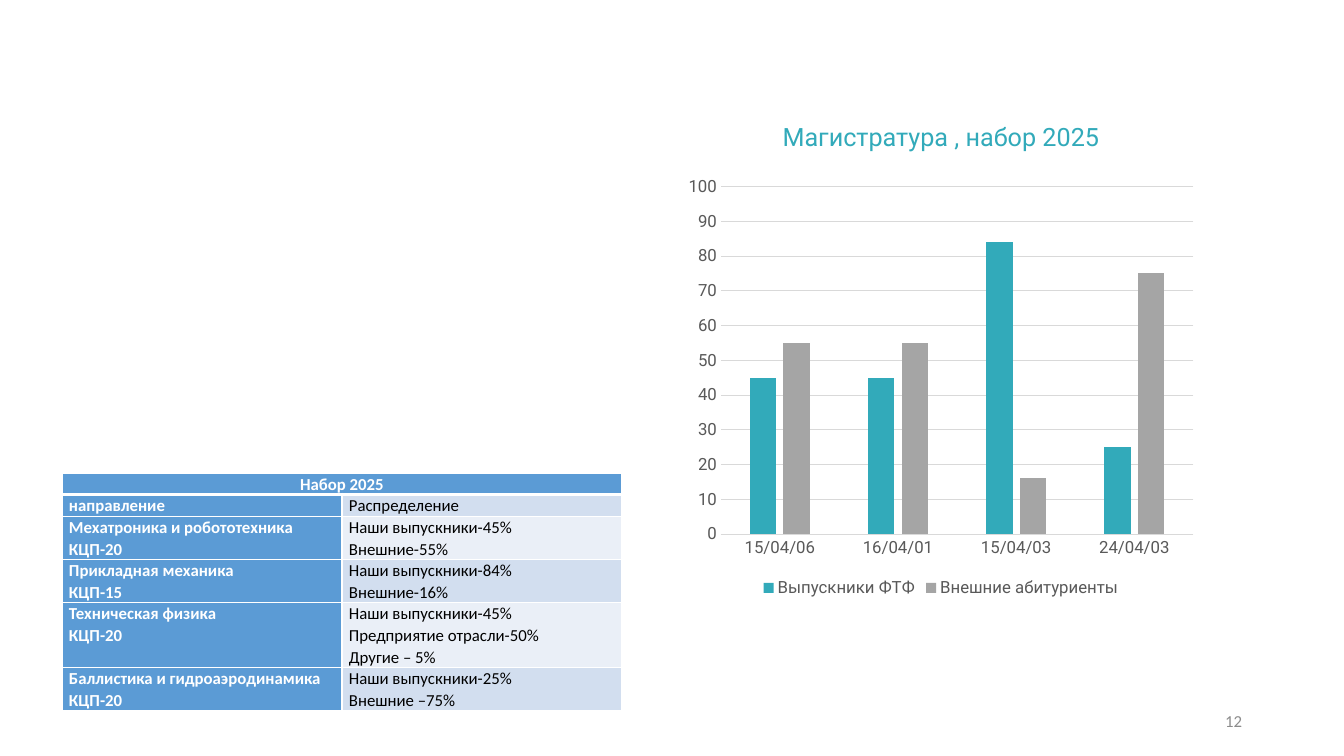
"""Build the slide on the 2025 master's intake: a table and a column chart."""
from lxml import etree
from pptx import Presentation
from pptx import util as u
from pptx.chart.data import CategoryChartData
from pptx.dml.color import RGBColor
from pptx.enum import chart as ch
from pptx.enum import text as t
from pptx.oxml.ns import qn

COLORS = {
    "teal": "32AABA", "gray": "A5A5A5", "label": "595959", "grid": "D9D9D9",
    "number": "8C8C8C", "blue": "5B9BD5", "band": "D2DEEF", "pale": "EAEFF7",
    "white": "FFFFFF", "black": "000000",
}
TABLE_TITLE = "Набор 2025"
TABLE_ROWS = [
    (["направление"], ["Распределение"]),
    (["Мехатроника и робототехника", "КЦП-20"], ["Наши выпускники-45%", "Внешние-55%"]),
    (["Прикладная механика", "КЦП-15"], ["Наши выпускники-84%", "Внешние-16%"]),
    (["Техническая физика", "КЦП-20"],
     ["Наши выпускники-45%", "Предприятие отрасли-50%", "Другие – 5%"]),
    (["Баллистика и гидроаэродинамика", "КЦП-20"], ["Наши выпускники-25%", "Внешние –75%"]),
]
CHART_TITLE = "Магистратура , набор 2025"
CATEGORIES = ["15/04/06", "16/04/01", "15/04/03", "24/04/03"]
SERIES = [
    ("Выпускники ФТФ", [45, 45, 84, 25], "teal"),
    ("Внешние абитуриенты", [55, 55, 16, 75], "gray"),
]
PAGE_NUMBER = "12"

SLIDE_SIZE = (1344, 756)
TABLE_AT = (62, 473)
COLUMN_WIDTH, LINE_HEIGHT = 280, 21
TITLE_AT = (671, 116, 540, 40)
CHART_AT = (678, 168, 526, 434)
NUMBER_AT = (950, 701, 302, 40)


def px(length):
    return u.Emu(round(length * 914400 / 100.8))


def rgb(name):
    return RGBColor.from_string(COLORS[name])


def set_font(font, size, color, name="Roboto", bold=False):
    font.size, font.name, font.bold = u.Pt(size), name, bold
    font.color.rgb = rgb(color)


def write(frame, lines, align=t.PP_ALIGN.LEFT, spacing=None, **font):
    for index, line in enumerate(lines):
        para = frame.add_paragraph() if index else frame.paragraphs[0]
        para.alignment = align
        para.line_spacing = spacing
        span = para.add_run()
        span.text = line
        set_font(span.font, **font)


def add_label(page, place, line, anchor=t.MSO_ANCHOR.TOP, **style):
    box = page.shapes.add_textbox(*map(px, place))
    box.text_frame.word_wrap = True
    box.text_frame.vertical_anchor = anchor
    write(box.text_frame, [line], **style)


def style_cell(cell, fill, top=1, bottom=1):
    cell.margin_left = cell.margin_right = px(7)
    cell.margin_top = cell.margin_bottom = 0
    props = cell._tc.get_or_add_tcPr()
    for side, width in (("L", 1), ("R", 1), ("T", top), ("B", bottom)):
        edge = etree.SubElement(props, qn(f"a:ln{side}"), w=str(u.Pt(width)))
        solid = etree.SubElement(edge, qn("a:solidFill"))
        etree.SubElement(solid, qn("a:srgbClr"), val=COLORS["white"])
    cell.fill.solid()
    cell.fill.fore_color.rgb = rgb(fill)


def add_intake_table(page):
    rows = [([TABLE_TITLE], [])] + TABLE_ROWS
    heights = [LINE_HEIGHT * max(map(len, row)) for row in rows]
    table = page.shapes.add_table(
        len(rows), 2, *map(px, TABLE_AT), px(2 * COLUMN_WIDTH), px(sum(heights))).table
    for column in table.columns:
        column.width = px(COLUMN_WIDTH)
    table.cell(0, 0).merge(table.cell(0, 1))
    for r, row in enumerate(rows):
        table.rows[r].height = px(heights[r])
        for c, lines in enumerate(row):
            cell = table.cell(r, c)
            header = r == 0 or c == 0
            fill = "blue" if header else "band" if r % 2 else "pale"
            style_cell(cell, fill, top=3 if r == 1 else 1, bottom=3 if r == 0 else 1)
            write(cell.text_frame, lines, spacing=1.07, size=12, name="Calibri", bold=header,
                  color="white" if header else "black",
                  align=t.PP_ALIGN.LEFT if r else t.PP_ALIGN.CENTER)


def add_intake_chart(page):
    data = CategoryChartData()
    data.categories = CATEGORIES
    for name, values, _ in SERIES:
        data.add_series(name, values)
    chart = page.shapes.add_chart(
        ch.XL_CHART_TYPE.COLUMN_CLUSTERED, *map(px, CHART_AT), data).chart
    set_font(chart.font, 10, "black")
    chart.has_title = False
    chart.has_legend = True
    chart.legend.position = ch.XL_LEGEND_POSITION.BOTTOM
    chart.legend.include_in_layout = False
    set_font(chart.legend.font, 12, "label")
    for axis in (chart.category_axis, chart.value_axis):
        axis.major_tick_mark = axis.minor_tick_mark = ch.XL_TICK_MARK.NONE
        set_font(axis.tick_labels.font, 12, "label")
    chart.value_axis.minimum_scale = 0
    chart.value_axis.maximum_scale = 100
    chart.value_axis.major_unit = 10
    chart.value_axis.format.line.fill.background()
    for line in (chart.category_axis.format.line, chart.value_axis.major_gridlines.format.line):
        line.width = u.Pt(0.75)
        line.color.rgb = rgb("grid")
    plot = chart.plots[0]
    plot.vary_by_categories = False
    plot.gap_width, plot.overlap = 219, -27
    for series, (_, _, color) in zip(plot.series, SERIES):
        series.format.fill.solid()
        series.format.fill.fore_color.rgb = rgb(color)


def main():
    deck = Presentation()
    deck.slide_width, deck.slide_height = map(px, SLIDE_SIZE)
    page = deck.slides.add_slide(deck.slide_layouts[6])
    add_label(page, NUMBER_AT, PAGE_NUMBER, anchor=t.MSO_ANCHOR.MIDDLE,
              align=t.PP_ALIGN.RIGHT, size=12, name="Calibri", color="number")
    add_intake_table(page)
    add_label(page, TITLE_AT, CHART_TITLE, align=t.PP_ALIGN.CENTER, size=18, color="teal")
    add_intake_chart(page)
    deck.save("out.pptx")


if __name__ == "__main__":
    main()
